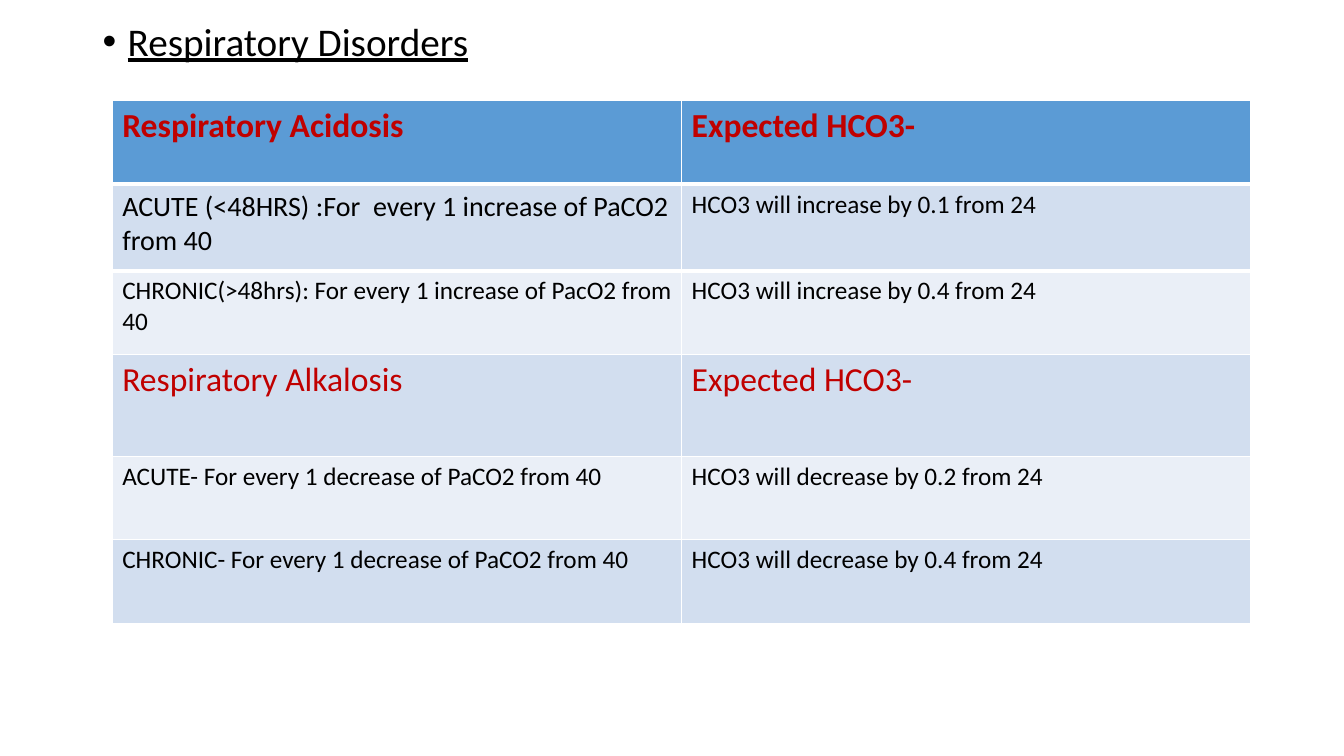
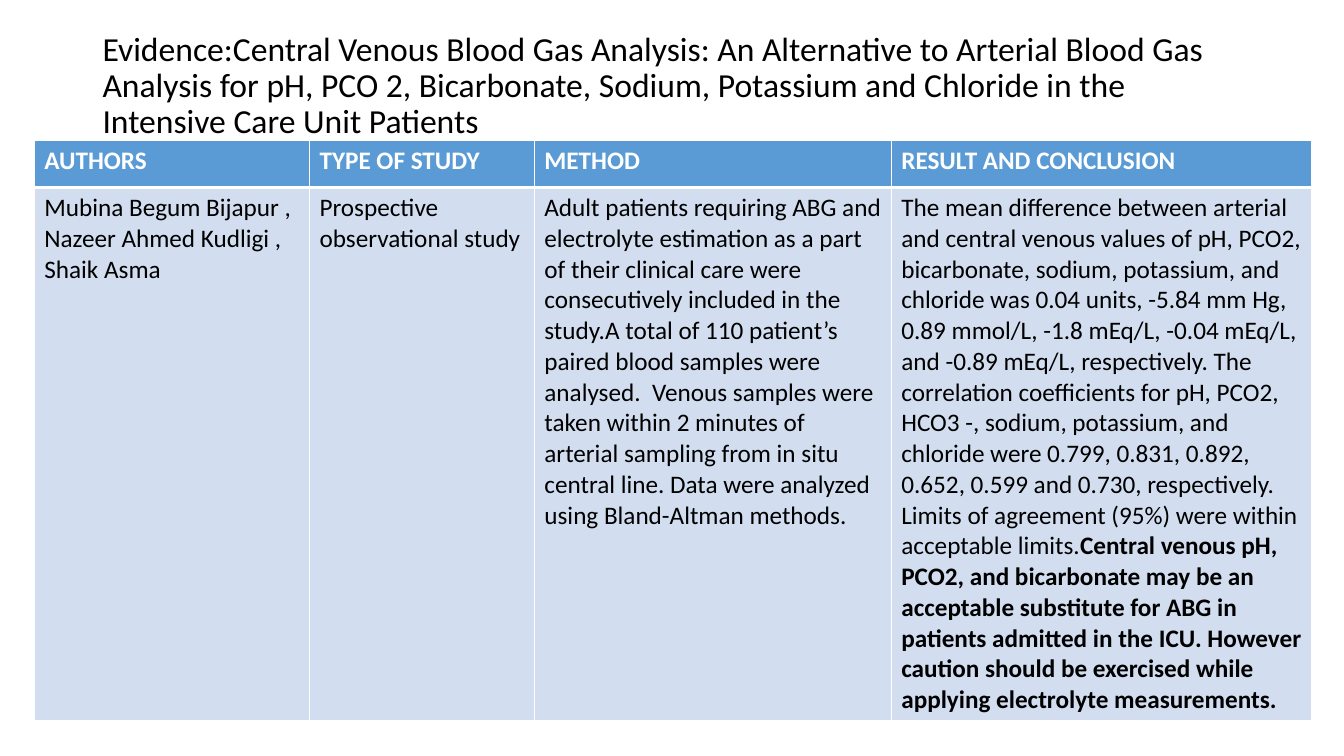
"""Build two slides on blood gas analysis: compensation rules and study evidence."""
from dataclasses import dataclass

from lxml.etree import Element, SubElement
from pptx import Presentation
from pptx.dml.color import RGBColor
from pptx.enum.text import MSO_ANCHOR as Anchor, MSO_AUTO_SIZE as AutoSize, PP_ALIGN as Align
from pptx.oxml.ns import qn
from pptx.util import Inches, Length, Pt

SLIDE_WIDTH, SLIDE_HEIGHT = Inches(13.33), Inches(7.5)
FONT = "Calibri"
BLACK, WHITE, RED = "000000", "FFFFFF", "C00000"
HEADER_FILL, BANDS = "5B9BD5", ("D2DEEF", "EAEFF7")
HEADING_LEFT, HEADING_WIDTH = 6.88, 86.27
CELL_RIGHT_MARGIN = 0.6
HEADER_RULE = Pt(3)
TITLE_ONLY = 5


@dataclass(frozen=True)
class Style:
    size: float = 18
    color: str = BLACK
    bold: bool = False


@dataclass(frozen=True)
class Row:
    height: float
    cells: tuple[str, ...]
    styles: tuple[Style, ...]
    conclusion: str = ""


@dataclass(frozen=True)
class Grid:
    left: float
    top: float
    columns: tuple[float, ...]
    rows: tuple[Row, ...]


@dataclass(frozen=True)
class Heading:
    text: str
    top: float
    height: float
    size: float
    bulleted: bool = False


BODY = Style()
STRONG = Style(bold=True)
COLUMN_HEAD = Style(color=WHITE, bold=True)
DISORDER_HEAD = Style(24, RED, True)
DISORDER_SUBHEAD = Style(24, RED)

RULES_HEADING = Heading("Respiratory Disorders", 2.3, 8, 28, bulleted=True)
RULES = Grid(8.35, 13.33, (42.37, 42.37), (
    Row(11.05, ("Respiratory Acidosis", "Expected HCO3-"), (DISORDER_HEAD,) * 2),
    Row(11.45, ("ACUTE (<48HRS) :For  every 1 increase of PaCO2 from 40",
                "HCO3 will increase by 0.1 from 24"), (Style(20), BODY)),
    Row(11.05, ("CHRONIC(>48hrs): For every 1 increase of PacO2 from 40",
                "HCO3 will increase by 0.4 from 24"), (BODY,) * 2),
    Row(13.47, ("Respiratory Alkalosis", "Expected HCO3-"), (DISORDER_SUBHEAD,) * 2),
    Row(11.05, ("ACUTE- For every 1 decrease of PaCO2 from 40",
                "HCO3 will decrease by 0.2 from 24"), (BODY,) * 2),
    Row(11.05, ("CHRONIC- For every 1 decrease of PaCO2 from 40",
                "HCO3 will decrease by 0.4 from 24"), (BODY,) * 2),
))

EVIDENCE_HEADING = Heading(
    "Evidence:Central Venous Blood Gas Analysis: An Alternative to Arterial Blood Gas "
    "Analysis for pH, PCO 2, Bicarbonate, Sodium, Potassium and Chloride in the "
    "Intensive Care Unit Patients", 5.33, 12.27, 24)
EVIDENCE = Grid(2.55, 18.6, (20.48, 16.73, 26.56, 31.3), (
    Row(6.2, ("AUTHORS", "TYPE OF STUDY", "METHOD", "RESULT AND CONCLUSION"),
        (COLUMN_HEAD,) * 4),
    Row(69.33, (
        "Mubina Begum Bijapur , Nazeer Ahmed Kudligi , Shaik Asma",
        "Prospective observational study",
        "Adult patients requiring ABG and electrolyte estimation as a part of their "
        "clinical care were consecutively included in the study.A total of 110 patient’s "
        "paired blood samples were analysed.  Venous samples were taken within 2 minutes "
        "of arterial sampling from in situ central line. Data were analyzed using "
        "Bland-Altman methods.",
        "The mean difference between arterial and central venous values of pH, PCO2, "
        "bicarbonate, sodium, potassium, and chloride was 0.04 units, -5.84 mm Hg, "
        "0.89 mmol/L, -1.8 mEq/L, -0.04 mEq/L, and -0.89 mEq/L, respectively. The "
        "correlation coefficients for pH, PCO2, HCO3 -, sodium, potassium, and chloride "
        "were 0.799, 0.831, 0.892, 0.652, 0.599 and 0.730, respectively. Limits of "
        "agreement (95%) were within acceptable limits.",
    ), (BODY,) * 4,
        "Central venous pH, PCO2, and bicarbonate may be an acceptable substitute for ABG "
        "in patients admitted in the ICU. However caution should be exercised while "
        "applying electrolyte measurements."),
))


def across(percent: float) -> Length:
    """Return a share of the slide's width."""
    return Length(round(SLIDE_WIDTH * percent / 100))


def down(percent: float) -> Length:
    """Return a share of the slide's height."""
    return Length(round(SLIDE_HEIGHT * percent / 100))


def rgb(color: str) -> RGBColor:
    """Turn a hex string into a colour."""
    return RGBColor.from_string(color)


def format_font(font, style: Style) -> None:
    """Apply a text style to a font."""
    font.name, font.size, font.bold = FONT, Pt(style.size), style.bold
    font.color.rgb = rgb(style.color)


def add_bullet(paragraph) -> None:
    """Give a paragraph a round bullet with a hanging indent."""
    properties = paragraph._p.get_or_add_pPr()
    properties.set("marL", str(Inches(0.25)))
    properties.set("indent", str(-Inches(0.25)))
    SubElement(properties, qn("a:buFont"), typeface="Arial")
    SubElement(properties, qn("a:buChar"), char="•")


def add_header_rule(cell, side: str) -> None:
    """Draw the thick white rule on one side of a cell."""
    rule = Element(qn(f"a:{side}"), w=str(HEADER_RULE))
    SubElement(SubElement(rule, qn("a:solidFill")), qn("a:srgbClr"), val=WHITE)
    cell._tc.get_or_add_tcPr().insert(0, rule)


def draw_heading(slide, heading: Heading) -> None:
    """Place and format the slide's title."""
    title = slide.shapes.title
    title.left, title.top = across(HEADING_LEFT), down(heading.top)
    title.width, title.height = across(HEADING_WIDTH), down(heading.height)
    frame = title.text_frame
    frame.text = heading.text
    frame.word_wrap, frame.auto_size = True, AutoSize.NONE
    frame.vertical_anchor = Anchor.TOP if heading.bulleted else Anchor.MIDDLE
    paragraph = frame.paragraphs[0]
    paragraph.alignment, paragraph.line_spacing = Align.LEFT, 0.9
    if heading.bulleted:
        add_bullet(paragraph)
    run = paragraph.runs[0]
    format_font(run.font, Style(heading.size))
    run.font.underline = heading.bulleted


def draw_grid(slide, grid: Grid) -> None:
    """Draw a table with a header row and banded body rows."""
    table = slide.shapes.add_table(
        len(grid.rows), len(grid.columns), across(grid.left), down(grid.top),
        across(sum(grid.columns)), down(sum(row.height for row in grid.rows))).table
    for column, width in zip(table.columns, grid.columns):
        column.width = across(width)
    for index, row in enumerate(grid.rows):
        table.rows[index].height = down(row.height)
        fill = BANDS[(index - 1) % 2] if index else HEADER_FILL
        for cell, text, style in zip(table.rows[index].cells, row.cells, row.styles):
            cell.fill.solid()
            cell.fill.fore_color.rgb = rgb(fill)
            cell.margin_right = across(CELL_RIGHT_MARGIN)
            if index < 2:
                add_header_rule(cell, ("lnB", "lnT")[index])
            cell.text_frame.text = text
            format_font(cell.text_frame.paragraphs[0].runs[0].font, style)
        if row.conclusion:
            closing = cell.text_frame.paragraphs[0].add_run()
            closing.text = row.conclusion
            format_font(closing.font, STRONG)


def main() -> None:
    """Build and save the presentation."""
    deck = Presentation()
    deck.slide_width, deck.slide_height = SLIDE_WIDTH, SLIDE_HEIGHT
    for heading, grid in ((RULES_HEADING, RULES), (EVIDENCE_HEADING, EVIDENCE)):
        slide = deck.slides.add_slide(deck.slide_layouts[TITLE_ONLY])
        draw_heading(slide, heading)
        draw_grid(slide, grid)
    deck.save("out.pptx")


if __name__ == "__main__":
    main()
